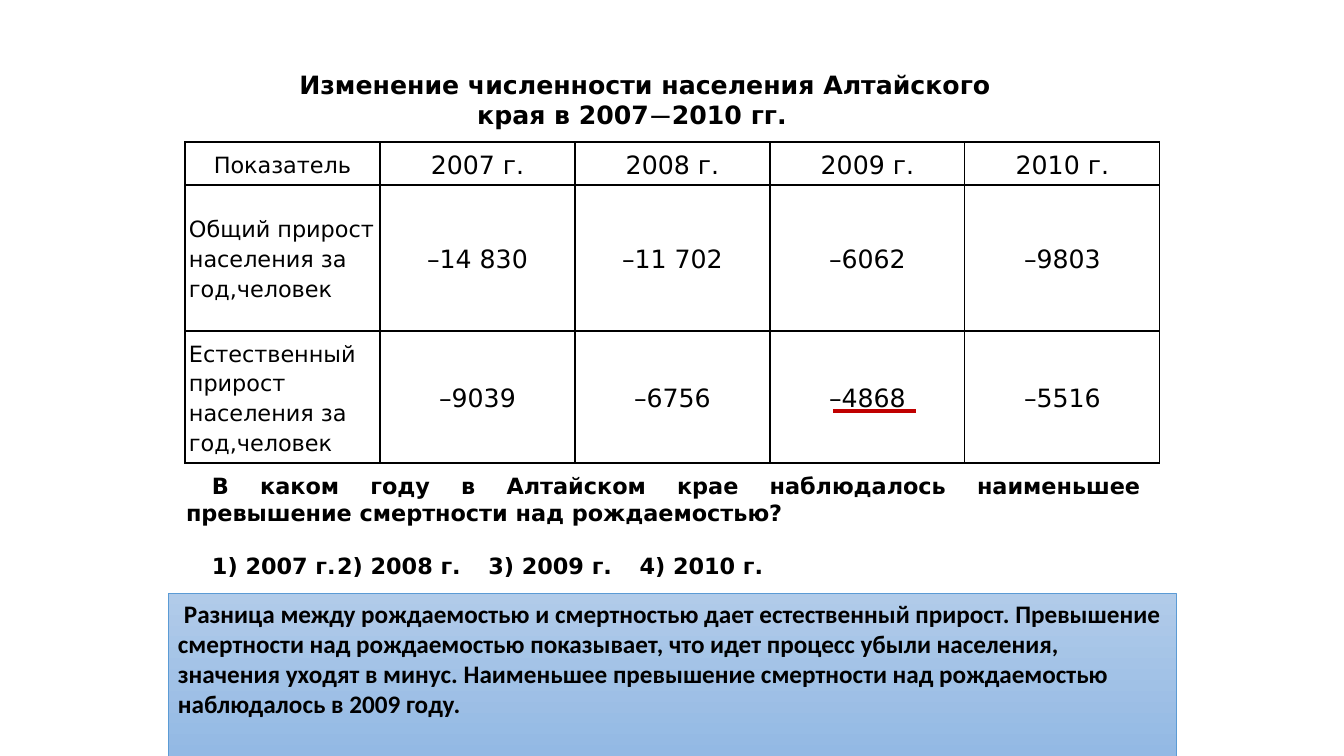
from lxml import etree
from pptx import Presentation, util as u
from pptx.dml.color import RGBColor
from pptx.enum import shapes, text
from pptx.oxml.ns import qn

COLOURS = {"ink": "000000", "top": "B1CBE9", "bottom": "93B9E4",
           "edge": "5B9BD5", "mark": "C00000"}
MAIN, NOTE = "DejaVu Sans", "Calibri"
ALIGN, ANCHOR = text.PP_ALIGN, text.MSO_ANCHOR


def px(length):
    return u.Emu(round(length * 914400 / 100.8))


def colour(name):
    return RGBColor.from_string(COLOURS[name])


class Page:
    """Holds the slide and draws its elements in one style."""

    def __init__(self, deck):
        self.slide = deck.slides.add_slide(deck.slide_layouts[1])

    def style(self, para, size, fonts=(MAIN,), bold=False, align=ALIGN.LEFT, indent=0):
        para.alignment = align
        para.space_before = u.Pt(0)
        props = para._p.get_or_add_pPr()
        props.set("marL", "0")
        props.set("indent", str(px(indent)))
        for span, font in zip(para.runs, fonts):
            span.font.size = u.Pt(size)
            span.font.name = font
            span.font.bold = bold
            span.font.color.rgb = colour("ink")

    def place(self, box, left, top, width, height, anchor=ANCHOR.TOP):
        box.left, box.top, box.width, box.height = map(px, (left, top, width, height))
        frame = box.text_frame
        frame.word_wrap = True
        frame.auto_size = text.MSO_AUTO_SIZE.NONE
        frame.vertical_anchor = anchor
        frame.margin_left = frame.margin_right = px(10)
        frame.margin_top = frame.margin_bottom = px(5)
        return frame

    def title(self, pieces, fonts, *area):
        para = self.place(self.slide.shapes.title, *area).paragraphs[0]
        for piece in pieces:
            para.add_run().text = piece
        self.style(para, 18, fonts, True, ALIGN.CENTER, 26)

    def question(self, wording, answers, stops, *area):
        frame = self.place(self.slide.placeholders[1], *area, ANCHOR.MIDDLE)
        frame.text = wording
        frame.add_paragraph().text = "\t".join(answers)
        for para, align in zip(frame.paragraphs, (ALIGN.JUSTIFY, ALIGN.LEFT)):
            self.style(para, 16, bold=True, align=align, indent=26)
            etree.SubElement(para._p.pPr, qn("a:buNone"))
        choices = frame.paragraphs[1]
        choices.space_before = u.Pt(19)
        tabs = etree.SubElement(choices._p.pPr, qn("a:tabLst"))
        for stop in stops:
            etree.SubElement(tabs, qn("a:tab"), pos=str(px(stop)), algn="l")

    def border(self, cell):
        props = cell._tc.get_or_add_tcPr()
        for side in ("lnL", "lnR", "lnT", "lnB"):
            line = etree.SubElement(props, qn(f"a:{side}"), w=str(u.Pt(1)))
            fill = etree.SubElement(line, qn("a:solidFill"))
            etree.SubElement(fill, qn("a:srgbClr"), val=COLOURS["ink"])

    def table(self, rows, heights, left, top, column):
        width = len(rows[0])
        table = self.slide.shapes.add_table(
            len(rows), width, px(left), px(top), px(column * width), px(sum(heights))).table
        table.first_row = table.horz_banding = False
        for row, height in zip(table.rows, heights):
            row.height = px(height)
        for r, values in enumerate(rows):
            for c, value in enumerate(values):
                cell = table.cell(r, c)
                cell.text = value
                cell.vertical_anchor = ANCHOR.MIDDLE
                cell.margin_left = cell.margin_right = px(4)
                cell.margin_top = cell.margin_bottom = px(4)
                self.border(cell)
                cell.fill.background()
                para = cell.text_frame.paragraphs[0]
                para.line_spacing = 1.15
                self.style(para, 18 if c else 16,
                           align=ALIGN.CENTER if c or not r else ALIGN.LEFT)

    def explanation(self, wording, *area):
        box = self.slide.shapes.add_shape(shapes.MSO_SHAPE.RECTANGLE, *map(px, area))
        box.shadow.inherit = False
        box.fill.gradient()
        box.fill.gradient_angle = 270
        for stop, name in zip(box.fill.gradient_stops, ("top", "bottom")):
            stop.color.rgb = colour(name)
        box.line.color.rgb = colour("edge")
        box.line.width = u.Pt(0.5)
        frame = self.place(box, *area)
        frame.text = wording
        self.style(frame.paragraphs[0], 18, (NOTE,), True, indent=6)

    def underline(self, left, right, top):
        line = self.slide.shapes.add_connector(
            shapes.MSO_CONNECTOR.STRAIGHT, px(left), px(top), px(right), px(top))
        line.line.color.rgb = colour("mark")
        line.line.width = u.Pt(2.25)
        etree.SubElement(line._element.spPr, qn("a:effectLst"))


def main():
    deck = Presentation()
    deck.slide_width, deck.slide_height = px(1344), px(756)
    page = Page(deck)
    years = [f"{year} г." for year in range(2007, 2011)]
    page.title(("Изменение численности населения Алтайского края в 2007", "—", "2010 гг."),
               (MAIN, NOTE, MAIN), 226, 64, 812, 72)
    page.table([
        ["Показатель", *years],
        ["Общий прирост населения за год,человек", "–14 830", "–11 702", "–6062", "–9803"],
        ["Естественный прирост населения за год,человек", "–9039", "–6756", "–4868", "–5516"],
    ], (43, 146, 132), 185, 142, 195)
    page.question(
        "В каком году в Алтайском крае наблюдалось наименьшее превышение "
        "смертности над рождаемостью?",
        [f"{number}) {year}" for number, year in enumerate(years, 1)],
        (243, 445, 638), 176, 466, 975, 119)
    page.explanation(
        "Разница между рождаемостью и смертностью дает естественный прирост. "
        "Превышение смертности над рождаемостью показывает, что идет процесс убыли "
        "населения, значения уходят в минус. Наименьшее превышение смертности над "
        "рождаемостью наблюдалось в 2009 году.", 168, 593, 1008, 163)
    page.underline(833, 916, 411)
    deck.save("out.pptx")


if __name__ == "__main__":
    main()
